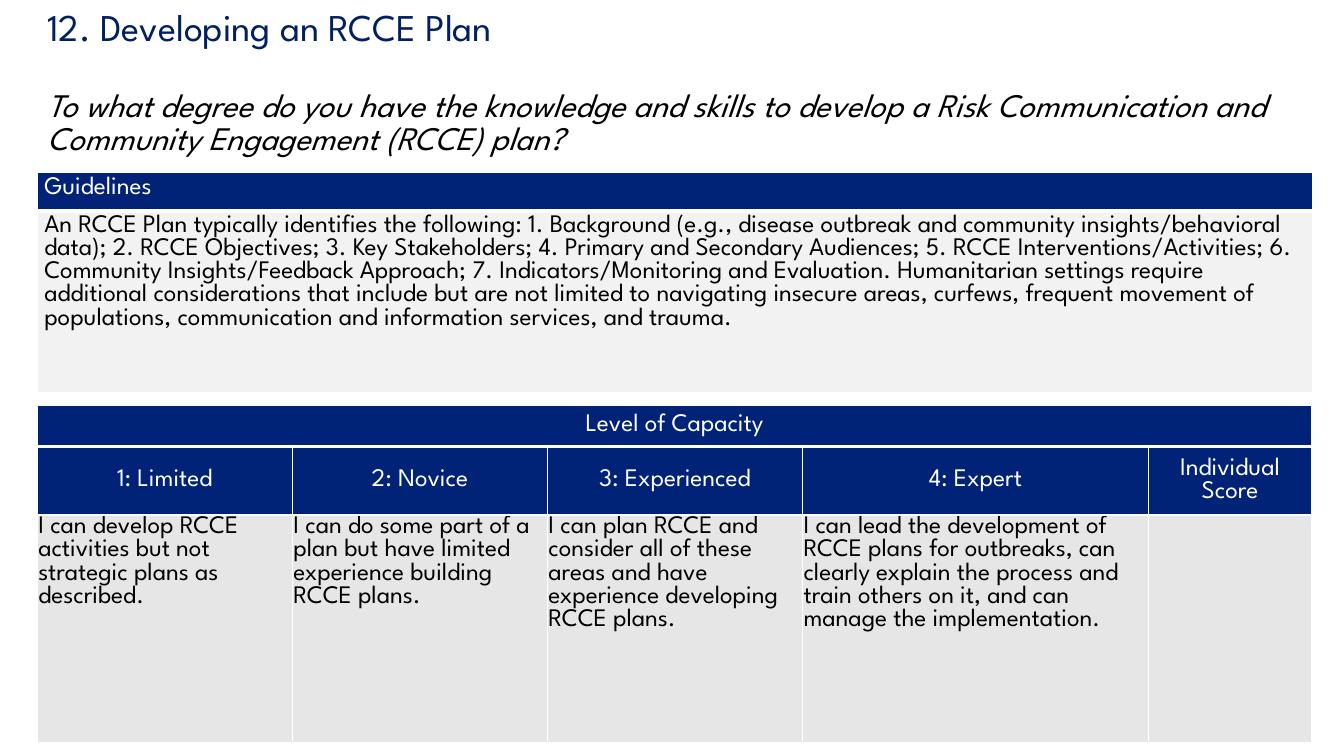
from dataclasses import dataclass

from lxml.etree import SubElement
from pptx import Presentation
from pptx.dml.color import RGBColor
from pptx.enum.text import MSO_ANCHOR as Anchor, PP_ALIGN as Align
from pptx.oxml.ns import qn
from pptx.util import Inches, Pt

FONT = "League Spartan"
WIDTH, HEIGHT = 13.33, 7.5
LEFT = 0.37
NAVY, WHITE, BLACK = "012377", "FFFFFF", "000000"


@dataclass(frozen=True)
class CellStyle:
    fill: str
    color: str
    insets: tuple[float, float, float, float]
    align: Align = Align.LEFT
    anchor: Anchor = Anchor.TOP
    bottom_border: float = 1


@dataclass(frozen=True)
class Row:
    height: float
    texts: tuple[str, ...]
    style: CellStyle


@dataclass(frozen=True)
class Heading:
    text: str
    size: float
    color: str
    italic: bool
    space_before: float


PADDED = (0.07, 0.04, 0.07, 0.04)
GUIDE_HEADER = CellStyle(NAVY, WHITE, PADDED, bottom_border=3)
GUIDE_BODY = CellStyle("F2F2F2", BLACK, PADDED)
LEVEL_TITLE = CellStyle(NAVY, WHITE, PADDED, Align.CENTER, Anchor.MIDDLE, 3)
LEVEL_HEADER = CellStyle(NAVY, WHITE, PADDED, Align.CENTER, Anchor.MIDDLE)
LEVEL_BODY = CellStyle("E7E6E6", BLACK, (0.01, 0.01, 0.01, 0))

HEADINGS = (
    Heading("12. Developing an RCCE Plan", 27, "002060", False, 0),
    Heading(
        "To what degree do you have the knowledge and skills to develop a Risk "
        "Communication and Community Engagement (RCCE) plan?",
        23.5, BLACK, True, 30,
    ),
)

GUIDELINES = (
    Row(0.33, ("Guidelines",), GUIDE_HEADER),
    Row(1.81, (
        "An RCCE Plan typically identifies the following: 1. Background (e.g., disease "
        "outbreak and community insights/behavioral data); 2. RCCE Objectives; 3. Key "
        "Stakeholders; 4. Primary and Secondary Audiences; 5. RCCE "
        "Interventions/Activities; 6. Community Insights/Feedback Approach; 7. "
        "Indicators/Monitoring and Evaluation. Humanitarian settings require additional "
        "considerations that include but are not limited to navigating insecure areas, "
        "curfews, frequent movement of populations, communication and information "
        "services, and trauma.",
    ), GUIDE_BODY),
)

LEVELS = (
    Row(0.41, ("Level of Capacity", "", "", "", ""), LEVEL_TITLE),
    Row(0.41, (
        "1: Limited", "2: Novice", "3: Experienced", "4: Expert", "Individual Score",
    ), LEVEL_HEADER),
    Row(2.26, (
        "I can develop RCCE activities but not strategic plans as described.",
        "I can do some part of a plan but have limited experience building RCCE plans.",
        "I can plan RCCE and consider all of these areas and have experience developing "
        "RCCE plans.",
        "I can lead the development of RCCE plans for outbreaks, can clearly explain the "
        "process and train others on it, and can manage the implementation.",
        "",
    ), LEVEL_BODY),
)


def rgb(value: str) -> RGBColor:
    return RGBColor.from_string(value)


def format_runs(paragraph, size: float, color: str, italic: bool = False) -> None:
    for run in paragraph.runs:
        run.font.name = FONT
        run.font.size = Pt(size)
        run.font.italic = italic
        run.font.color.rgb = rgb(color)


def add_headings(slide, headings: tuple[Heading, ...]) -> None:
    box = slide.shapes.add_textbox(
        Inches(LEFT), Inches(0.11), Inches(WIDTH - 2 * LEFT), Inches(1.5))
    frame = box.text_frame
    frame.word_wrap = True
    frame.text = "\n".join(heading.text for heading in headings)
    for paragraph, heading in zip(frame.paragraphs, headings):
        paragraph.line_spacing = Pt(23.6)
        paragraph.space_before = Pt(heading.space_before)
        format_runs(paragraph, heading.size, heading.color, heading.italic)


def add_borders(cell, bottom: float) -> None:
    properties = cell._tc.get_or_add_tcPr()
    for side, width in (("L", 1), ("R", 1), ("T", 1), ("B", bottom)):
        line = SubElement(properties, qn(f"a:ln{side}"), w=str(Pt(width)))
        fill = SubElement(line, qn("a:solidFill"))
        SubElement(fill, qn("a:srgbClr"), val=WHITE)


def style_cell(cell, text: str, style: CellStyle) -> None:
    cell.text_frame.text = text
    cell.vertical_anchor = style.anchor
    (cell.margin_left, cell.margin_top,
     cell.margin_right, cell.margin_bottom) = map(Inches, style.insets)
    add_borders(cell, style.bottom_border)
    cell.fill.solid()
    cell.fill.fore_color.rgb = rgb(style.fill)
    paragraph = cell.text_frame.paragraphs[0]
    paragraph.alignment = style.align
    format_runs(paragraph, 18, style.color)


def add_grid(slide, top: float, widths: tuple[float, ...], rows: tuple[Row, ...]):
    table = slide.shapes.add_table(
        len(rows), len(widths), Inches(LEFT), Inches(top),
        Inches(sum(widths)), Inches(sum(row.height for row in rows))).table
    table.first_row = table.horz_banding = False
    for column, width in zip(table.columns, widths):
        column.width = Inches(width)
    for row_index, row in enumerate(rows):
        table.rows[row_index].height = Inches(row.height)
        for column_index, text in enumerate(row.texts):
            style_cell(table.cell(row_index, column_index), text, row.style)
    return table


def main() -> None:
    deck = Presentation()
    deck.slide_width, deck.slide_height = Inches(WIDTH), Inches(HEIGHT)
    slide = deck.slides.add_slide(deck.slide_layouts[6])
    add_headings(slide, HEADINGS)
    levels = add_grid(slide, 4.02, (2.53, 2.53, 2.53, 3.43, 1.62), LEVELS)
    levels.cell(0, 0).merge(levels.cell(0, 4))
    add_grid(slide, 1.71, (12.65,), GUIDELINES)
    deck.save("out.pptx")


if __name__ == "__main__":
    main()
